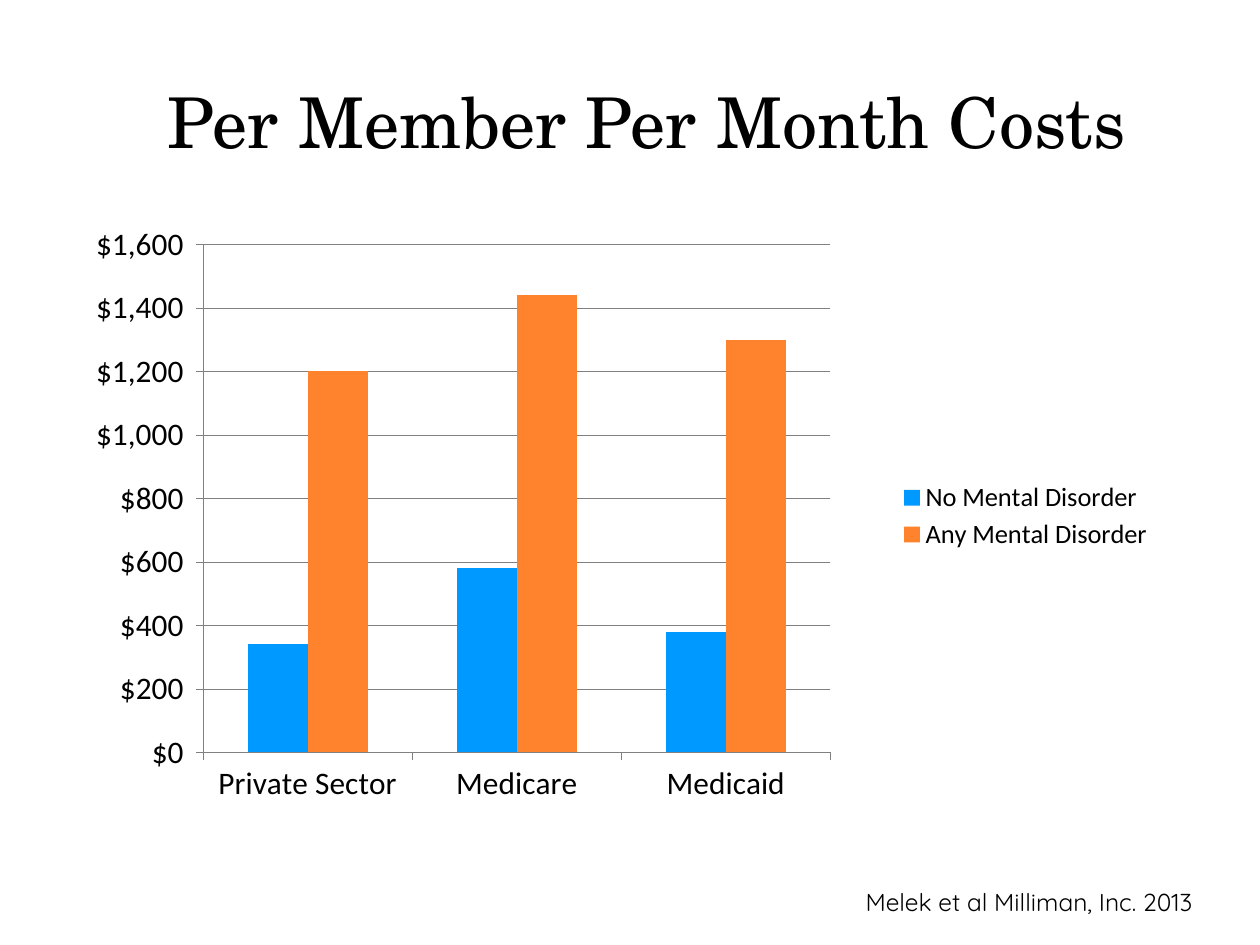
from pptx import Presentation
from pptx import util as u
from pptx.chart import data
from pptx.dml import color
from pptx.enum import chart as c, text as t
from pptx.oxml import parse_xml

CHART_NS = "http://schemas.openxmlformats.org/drawingml/2006/chart"
CURRENCY = '"$"#,##0_);[Red]\\("$"#,##0\\)'
CATEGORIES = ["Private Sector", "Medicare", "Medicaid"]
SERIES = [
    ("No Mental Disorder", [340, 580, 380], "0099FF"),
    ("Any Mental Disorder", [1200, 1440, 1300], "FF822D"),
]


def rgb(value):
    """Turn a hex string into a colour."""
    return color.RGBColor.from_string(value)


def style_font(font, name, size):
    """Give a font its typeface and size in black."""
    font.name = name
    font.size = u.Pt(size)
    font.bold = False
    font.color.rgb = rgb("000000")


def style_line(line):
    """Apply the thin grey line shared by axes and gridlines."""
    line.color.rgb = rgb("808080")
    line.width = u.Pt(0.25)


def add_text(slide, box, content, name, size, alignment, wrap):
    """Add a one-paragraph text box."""
    shape = slide.shapes.add_textbox(*(u.Cm(length) for length in box))
    frame = shape.text_frame
    frame.word_wrap = wrap
    frame.vertical_anchor = t.MSO_ANCHOR.MIDDLE
    frame.text = content
    paragraph = frame.paragraphs[0]
    paragraph.alignment = alignment
    style_font(paragraph.runs[0].font, name, size)


def style_axis(axis):
    """Set the labels, ticks and line of an axis."""
    style_font(axis.tick_labels.font, "Calibri", 17.9)
    style_line(axis.format.line)
    axis.major_tick_mark = c.XL_TICK_MARK.OUTSIDE
    axis.minor_tick_mark = c.XL_TICK_MARK.NONE


def place_plot(chart, left, top, width, height):
    """Fix the inner plot area as fractions of the chart."""
    modes = '<c:layoutTarget val="inner"/><c:xMode val="edge"/><c:yMode val="edge"/>'
    sizes = "".join(
        f'<c:{key} val="{value}"/>'
        for key, value in zip("xywh", (left, top, width, height))
    )
    layout = parse_xml(
        f'<c:layout xmlns:c="{CHART_NS}"><c:manualLayout>{modes}{sizes}'
        "</c:manualLayout></c:layout>"
    )
    plot_area = chart.plots[0]._element.getparent()
    for old in plot_area.findall(f"{{{CHART_NS}}}layout"):
        plot_area.remove(old)
    plot_area.insert(0, layout)


def add_cost_chart(slide, box):
    """Add the clustered columns of monthly costs."""
    chart_data = data.CategoryChartData(number_format=CURRENCY)
    chart_data.categories = CATEGORIES
    for name, values, _ in SERIES:
        chart_data.add_series(name, values)
    chart = slide.shapes.add_chart(
        c.XL_CHART_TYPE.COLUMN_CLUSTERED,
        *(u.Cm(length) for length in box),
        chart_data,
    ).chart
    chart.has_title = False
    style_font(chart.font, "Cabin", 17.9)

    plot = chart.plots[0]
    plot.vary_by_categories = False
    plot.gap_width = 150
    plot.overlap = 0
    for series, (_, _, fill) in zip(plot.series, SERIES):
        series.format.fill.solid()
        series.format.fill.fore_color.rgb = rgb(fill)

    style_axis(chart.category_axis)
    axis = chart.value_axis
    style_axis(axis)
    axis.minimum_scale, axis.maximum_scale, axis.major_unit = 0, 1600, 200
    axis.tick_labels.number_format = CURRENCY
    axis.tick_labels.number_format_is_linked = False
    axis.has_major_gridlines = True
    style_line(axis.major_gridlines.format.line)

    chart.has_legend = True
    chart.legend.position = c.XL_LEGEND_POSITION.RIGHT
    chart.legend.include_in_layout = False
    style_font(chart.legend.font, "Calibri", 15.1)
    place_plot(chart, 0.11, 0.04, 0.58, 0.86)


def main():
    """Build and save the slide."""
    presentation = Presentation()
    presentation.slide_width = u.Cm(25.4)
    presentation.slide_height = u.Cm(19.05)
    slide = presentation.slides.add_slide(presentation.slide_layouts[6])
    add_text(slide, (1.07, 1.7, 23.93, 1.47), "Per Member Per Month Costs",
             "TeX Gyre Schola", 40, t.PP_ALIGN.CENTER, True)
    add_cost_chart(slide, (1.7, 4.45, 21.8, 11.91))
    add_text(slide, (17.2, 17.75, 7.62, 0.86), "Melek et al Milliman, Inc. 2013",
             "Quicksand", 14, t.PP_ALIGN.LEFT, False)
    presentation.save("out.pptx")


if __name__ == "__main__":
    main()
